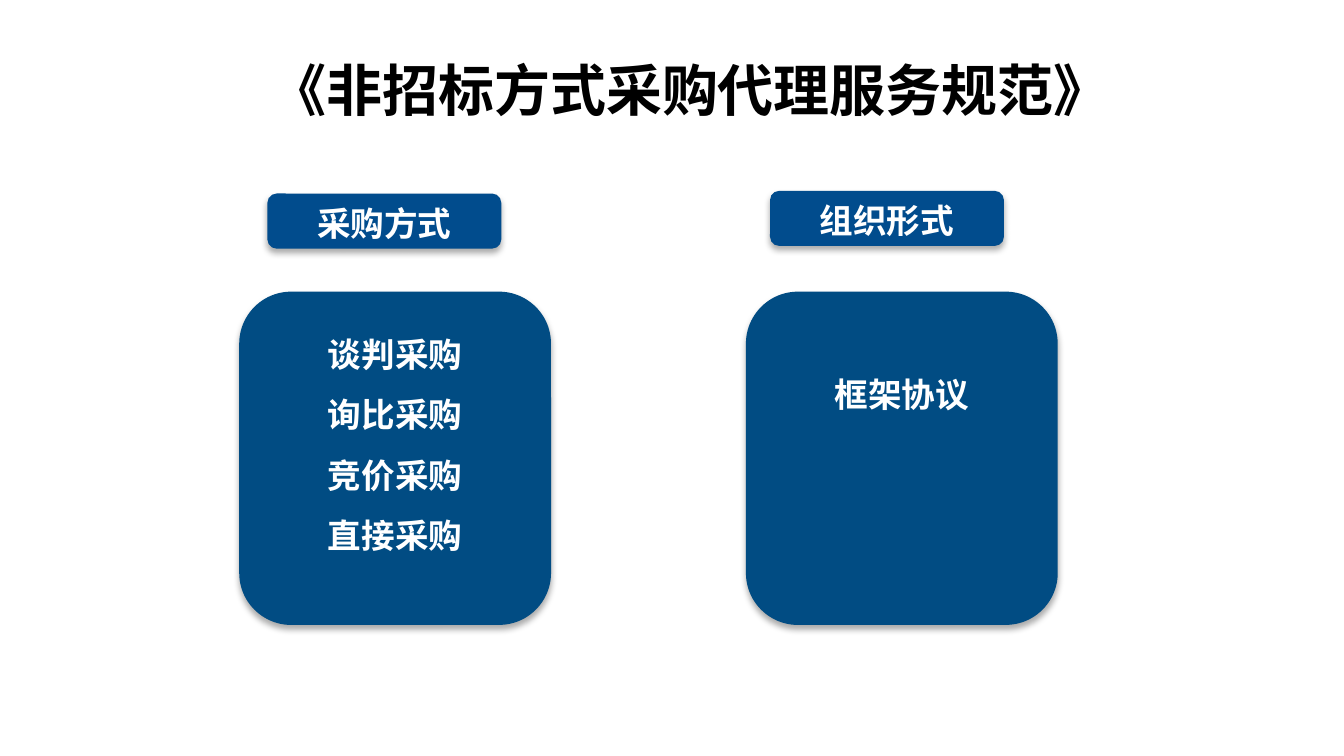
from lxml import etree
from pptx import Presentation
from pptx.dml.color import RGBColor
from pptx.enum.shapes import MSO_SHAPE
from pptx.enum.text import MSO_ANCHOR, MSO_AUTO_SIZE, PP_ALIGN
from pptx.oxml.ns import qn
from pptx.util import Inches, Pt

ROUND = MSO_SHAPE.ROUNDED_RECTANGLE
TOP, MIDDLE = MSO_ANCHOR.TOP, MSO_ANCHOR.MIDDLE
CENTER = PP_ALIGN.CENTER
GROW = MSO_AUTO_SIZE.SHAPE_TO_FIT_TEXT

COLORS = {
    "title": "000000",
    "label": "014C8D",
    "panel": "014C83",
    "text": "FFFFFF",
    "shadow": "000000",
}
LATIN, HAN = "Cabin", "Noto Sans CJK SC"


def color(name):
    return RGBColor.from_string(COLORS[name])


def style(par, size, tone, face):
    """Centre a paragraph and format its runs."""
    par.alignment = CENTER
    for run in par.runs:
        font = run.font
        font.size, font.bold, font.name = Pt(size), True, face
        font.color.rgb = color(tone)
        etree.SubElement(run._r.get_or_add_rPr(), qn("a:ea"), typeface=HAN)


def add_shadow(shape):
    """Give a shape a soft shadow straight below it."""
    shape.shadow.inherit = False
    effects = shape._element.spPr.find(qn("a:effectLst"))
    outer = etree.SubElement(
        effects, qn("a:outerShdw"), blurRad=str(Pt(3.5)), dist=str(Pt(2.2)),
        dir="5400000", algn="t", rotWithShape="0")
    tint = etree.SubElement(outer, qn("a:srgbClr"), val=COLORS["shadow"])
    etree.SubElement(tint, qn("a:alpha"), val="32000")


def add_title(slide, text):
    title = slide.shapes.title
    title.left, title.top = Inches(1.02), Inches(0.4)
    title.width, title.height = Inches(8.23), Inches(0.51)
    frame = title.text_frame
    frame.text = text
    frame.vertical_anchor, frame.auto_size = MIDDLE, GROW
    frame.margin_left = frame.margin_right = frame.margin_bottom = 0
    frame.margin_top = Inches(0.01)
    par = frame.paragraphs[0]
    par.space_before = Pt(0.7)
    style(par, 30, "title", LATIN)


def add_box(slide, box, fill, lines, spacing=1.0, inset=0.05):
    """Add a rounded box with one centred paragraph per line."""
    shape = slide.shapes.add_shape(ROUND, *map(Inches, box))
    shape.fill.solid()
    shape.fill.fore_color.rgb = color(fill)
    shape.line.fill.background()
    add_shadow(shape)
    frame = shape.text_frame
    frame.text = "\n".join(lines)
    frame.vertical_anchor = TOP
    frame.margin_top = Inches(inset)
    for par in frame.paragraphs:
        par.line_spacing = spacing
        style(par, 18, "text", HAN)


def main():
    deck = Presentation()
    # Widescreen, 16:9
    deck.slide_width = Inches(10)
    deck.slide_height = deck.slide_width * 9 // 16
    slide = deck.slides.add_slide(deck.slide_layouts[5])
    add_title(slide, "《非招标方式采购代理服务规范》")

    # Columns: label, label left and top, panel left, panel inset, items
    columns = [
        ("采购方式", 1.99, 1.44, 1.78, 0.05,
         ["谈判采购", "询比采购", "竞价采购", "直接采购"]),
        ("组织形式", 5.73, 1.42, 5.55, 0.35, ["框架协议"]),
    ]
    for label, left, top, edge, inset, items in columns:
        add_box(slide, (edge, 2.17, 2.32, 2.48), "panel", items, 1.5, inset)
        add_box(slide, (left, top, 1.74, 0.41), "label", [label])

    deck.save("out.pptx")


if __name__ == "__main__":
    main()
